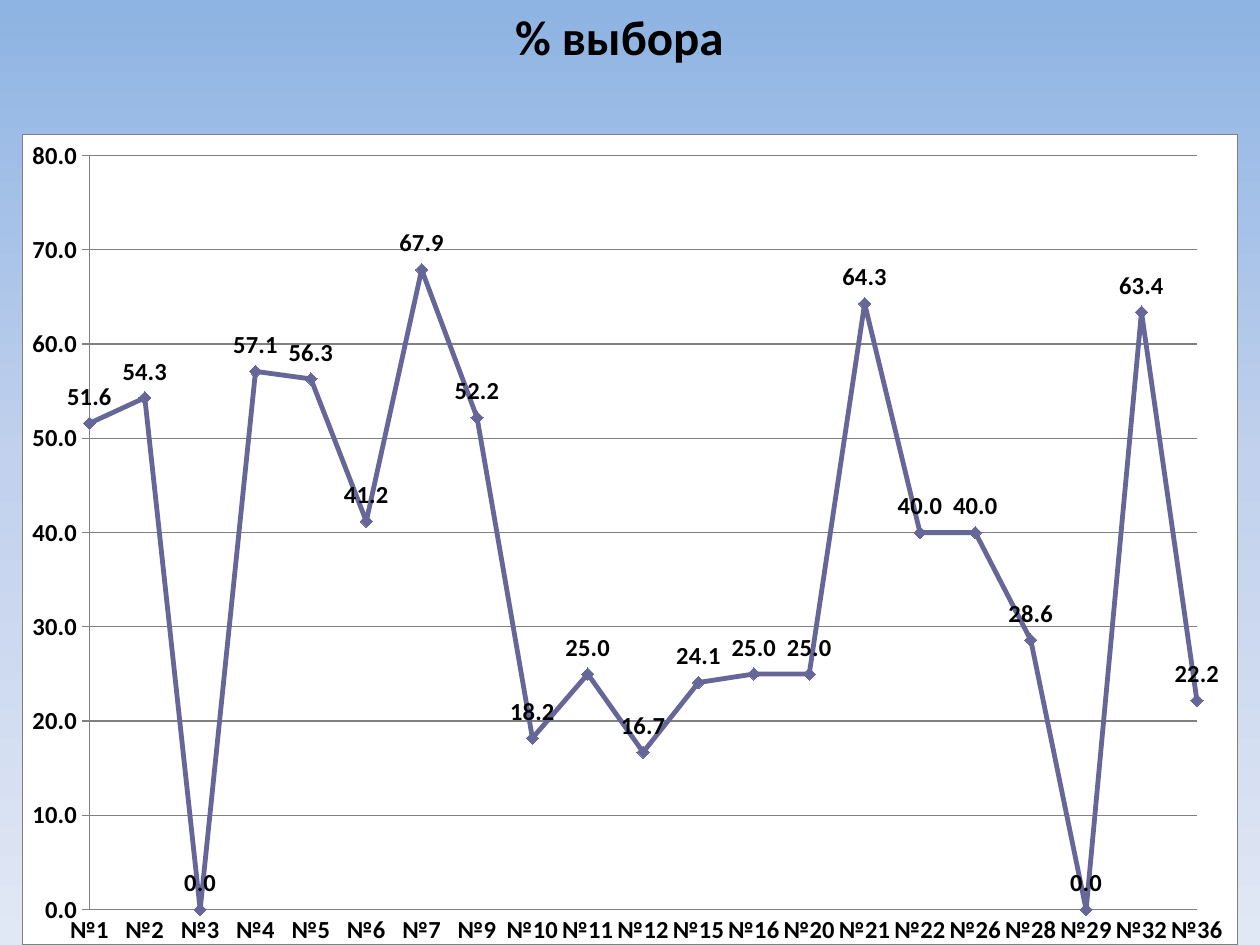
from copy import deepcopy
from dataclasses import dataclass

from lxml.etree import SubElement
from pptx import Presentation
from pptx.chart.data import CategoryChartData
from pptx.dml.color import RGBColor
from pptx.enum.chart import XL_CHART_TYPE as ChartType
from pptx.enum.chart import XL_LABEL_POSITION as LabelPosition
from pptx.enum.chart import XL_MARKER_STYLE as MarkerStyle
from pptx.enum.chart import XL_TICK_MARK as TickMark
from pptx.enum.text import MSO_ANCHOR, MSO_AUTO_SIZE, PP_ALIGN
from pptx.oxml import parse_xml
from pptx.oxml.ns import nsdecls, qn
from pptx.util import Inches, Pt


@dataclass(frozen=True)
class Theme:
    font: str = "Calibri"
    text: str = "000000"
    line: str = "666699"
    axis: str = "808080"
    panel: str = "FFFFFF"
    sky: tuple = ((0, "8EB4E3"), (0.5, "C2D1ED"), (1, "E1E8F5"))
    title_size: int = 28
    label_size: int = 14
    chart_size: int = 10


THEME = Theme()
TITLE_BOX = (3.98, 0, 1.87, 0.57)
CHART_BOX = (0.18, 1.07, 9.64, 6.43)
PLOT_LAYOUT = {"x": 0.008, "y": 0.007, "w": 0.98, "h": 0.993}
CHOICES = {
    "№1": 51.6, "№2": 54.3, "№3": 0, "№4": 57.1, "№5": 56.3, "№6": 41.2,
    "№7": 67.9, "№9": 52.2, "№10": 18.2, "№11": 25, "№12": 16.7,
    "№15": 24.1, "№16": 25, "№20": 25, "№21": 64.3, "№22": 40,
    "№26": 40, "№28": 28.6, "№29": 0, "№32": 63.4, "№36": 22.2,
}


def color(value):
    return RGBColor.from_string(value)


def style_font(font, size, bold=True):
    font.name = THEME.font
    font.size = Pt(size)
    font.bold = bold
    font.color.rgb = color(THEME.text)


def hairline(line):
    line.color.rgb = color(THEME.axis)
    line.width = 0


def paint_background(slide):
    fill = slide.background.fill
    fill.gradient()
    fill.gradient_angle = 270
    stops = fill.gradient_stops
    first = stops[0]
    first.color.rgb = color(THEME.sky[0][1])
    stop_list = slide.background._cSld.find(".//" + qn("a:gsLst"))
    stop_list.insert(1, deepcopy(stop_list[0]))
    for stop, (position, value) in zip(fill.gradient_stops, THEME.sky):
        stop.position = position
        stop.color.rgb = color(value)


def add_title(slide, box):
    title = slide.shapes.title
    title.left, title.top, title.width, title.height = map(Inches, box)
    frame = title.text_frame
    frame.text = "% выбора"
    frame.word_wrap = False
    frame.auto_size = MSO_AUTO_SIZE.SHAPE_TO_FIT_TEXT
    frame.vertical_anchor = MSO_ANCHOR.TOP
    heading = frame.paragraphs[0]
    heading.alignment = PP_ALIGN.CENTER
    style_font(heading.font, THEME.title_size)


def panel_properties(border):
    outline = (f'<a:ln w="0"><a:solidFill><a:srgbClr val="{THEME.axis}"/></a:solidFill></a:ln>'
               if border else "<a:ln><a:noFill/></a:ln>")
    return parse_xml(
        f'<c:spPr {nsdecls("c", "a")}><a:solidFill><a:srgbClr val="{THEME.panel}"/>'
        f"</a:solidFill>{outline}</c:spPr>")


def lay_out_plot(chart):
    """Fill the chart and its plot, and place the plot with its axis labels."""
    chart_part = chart._chartSpace.find(qn("c:chart"))
    chart_part.addnext(panel_properties(border=True))
    plot_area = chart_part.find(qn("c:plotArea"))
    plot_area.append(panel_properties(border=False))
    for old in plot_area.findall(qn("c:layout")):
        plot_area.remove(old)
    settings = {"layoutTarget": "outer", "xMode": "edge", "yMode": "edge", **PLOT_LAYOUT}
    layout = parse_xml(f'<c:layout {nsdecls("c")}><c:manualLayout/></c:layout>')
    for tag, value in settings.items():
        SubElement(layout[0], qn(f"c:{tag}")).set("val", str(value))
    plot_area.insert(0, layout)


def style_axes(chart):
    categories, values = chart.category_axis, chart.value_axis
    for axis, tick in ((categories, TickMark.NONE), (values, TickMark.CROSS)):
        axis.major_tick_mark = tick
        axis.minor_tick_mark = TickMark.NONE
        style_font(axis.tick_labels.font, THEME.label_size)
        hairline(axis.format.line)

    # Every category is labelled, level, below its point.
    category_xml = categories._element
    category_xml.find(qn("c:txPr")).find(qn("a:bodyPr")).set("rot", "0")
    skip = parse_xml(f'<c:tickLblSkip {nsdecls("c")} val="1"/>')
    category_xml.find(qn("c:noMultiLvlLbl")).addprevious(skip)

    values.minimum_scale, values.maximum_scale, values.major_unit = 0, 80, 10
    values.tick_labels.number_format = "0.0"
    values.tick_labels.number_format_is_linked = False
    values.has_major_gridlines = True
    hairline(values.major_gridlines.format.line)

    # The line starts and ends on the edges of the plot.
    value_xml = values._element
    for old in value_xml.findall(qn("c:crossBetween")):
        value_xml.remove(old)
    crossing = parse_xml(f'<c:crossBetween {nsdecls("c")} val="midCat"/>')
    value_xml.find(qn("c:crosses")).addnext(crossing)


def style_series(series):
    series.smooth = False
    series.format.line.color.rgb = color(THEME.line)
    series.format.line.width = Pt(2.75)
    marker = series.marker
    marker.style = MarkerStyle.DIAMOND
    marker.size = 7
    marker.format.fill.solid()
    marker.format.fill.fore_color.rgb = color(THEME.line)
    marker.format.line.color.rgb = color(THEME.line)
    labels = series.data_labels
    labels.show_value = True
    labels.position = LabelPosition.ABOVE
    labels.number_format = "0.0"
    labels.number_format_is_linked = False
    style_font(labels.font, THEME.label_size)


def add_choice_chart(slide, box):
    data = CategoryChartData(number_format="0.0")
    data.categories = list(CHOICES)
    data.add_series("Series 1", CHOICES.values())
    chart = slide.shapes.add_chart(
        ChartType.LINE_MARKERS_STACKED, *map(Inches, box), data).chart
    chart.has_title = False
    chart.has_legend = False
    style_font(chart.font, THEME.chart_size, bold=False)
    chart.plots[0].vary_by_categories = False
    lay_out_plot(chart)
    style_axes(chart)
    style_series(chart.plots[0].series[0])


def main():
    deck = Presentation()
    deck.slide_width, deck.slide_height = Inches(10), Inches(7.5)
    title_only = deck.slide_layouts[5]
    slide = deck.slides.add_slide(title_only)
    paint_background(slide)
    add_title(slide, TITLE_BOX)
    add_choice_chart(slide, CHART_BOX)
    deck.save("out.pptx")


if __name__ == "__main__":
    main()
